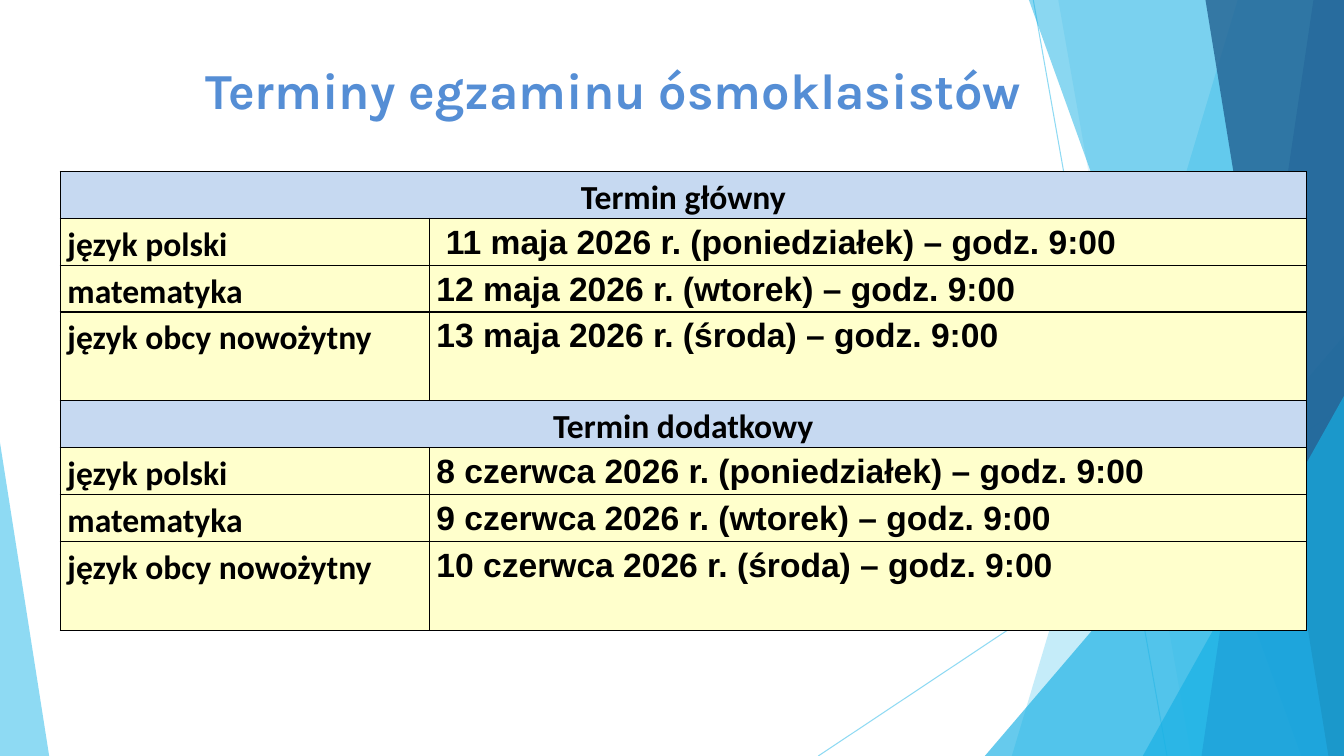
from lxml import etree
from pptx import Presentation
from pptx import util as u
from pptx.dml.color import RGBColor
from pptx.enum import shapes, text
from pptx.oxml import ns


def color(hex_string):
    return RGBColor.from_string(hex_string)


def set_opacity(properties, percent):
    for srgb in properties.iter(ns.qn("a:srgbClr")):
        etree.SubElement(srgb, ns.qn("a:alpha"), val=str(percent * 1000))


WIDTH, HEIGHT = 33.87, 19.05
presentation = Presentation()
presentation.slide_width = u.Cm(WIDTH)
presentation.slide_height = u.Cm(HEIGHT)
slide = presentation.slides.add_slide(presentation.slide_layouts[6])

# Thin background lines
for x1, y1, x2, y2 in [(26.04, 0, 29.41, HEIGHT), (WIDTH, 10.24, 20.62, HEIGHT)]:
    line = slide.shapes.add_connector(
        shapes.MSO_CONNECTOR.STRAIGHT, u.Cm(x1), u.Cm(y1), u.Cm(x2), u.Cm(y2))
    line.line.color.rgb = color("5FCBEF")
    line.line.width = u.Pt(0.75)
    set_opacity(line._element.spPr, 70)
    etree.SubElement(line._element.spPr, ns.qn("a:effectLst"))

# Translucent facets along the right and left edges
TOP_RIGHT, BOTTOM_RIGHT = (WIDTH, 0), (WIDTH, HEIGHT)
facets = [
    ("5FCBEF", 36, [(31.19, 0), TOP_RIGHT, BOTTOM_RIGHT, (25.5, HEIGHT)]),
    ("5FCBEF", 20, [(26.67, 0), TOP_RIGHT, BOTTOM_RIGHT, (30.02, HEIGHT)]),
    ("17B0E4", 66, [(24.82, HEIGHT), (WIDTH, 8.46), BOTTOM_RIGHT]),
    ("17B0E4", 50, [(25.93, 0), TOP_RIGHT, BOTTOM_RIGHT, (32.79, HEIGHT)]),
    ("2E83C3", 70, [(33.1, 0), TOP_RIGHT, BOTTOM_RIGHT, (30.28, HEIGHT)]),
    ("236292", 80, [(30.38, 0), TOP_RIGHT, BOTTOM_RIGHT, (33.48, HEIGHT)]),
    ("17B0E4", 66, [(28.8, HEIGHT), (WIDTH, 9.98), BOTTOM_RIGHT]),
    ("5FCBEF", 70, [(0, HEIGHT), (0, 11.15), (1.24, HEIGHT)]),
]
for fill, opacity, corners in facets:
    points = [(u.Cm(x), u.Cm(y)) for x, y in corners]
    builder = slide.shapes.build_freeform(*points[0])
    builder.add_line_segments(points[1:], close=True)
    facet = builder.convert_to_shape()
    facet.shadow.inherit = False
    facet.fill.solid()
    facet.fill.fore_color.rgb = color(fill)
    facet.line.fill.background()
    set_opacity(facet._element.spPr, opacity)

# Title
title = slide.shapes.add_textbox(u.Cm(4.93), u.Cm(1.36), u.Cm(23.88), u.Cm(3.66))
title.text_frame.word_wrap = True
title.text_frame.text = "Terminy egzaminu ósmoklasistów"
title_font = title.text_frame.paragraphs[0].runs[0].font
title_font.name = "Karla"
title_font.size = u.Pt(36)
title_font.bold = True
title_font.color.rgb = color("558ED5")

# Exam dates: a row with one entry is a heading across both columns
exams = [
    ("Termin główny",),
    ("język polski", " 11 maja 2026 r. (poniedziałek) – godz. 9:00"),
    ("matematyka", "12 maja 2026 r. (wtorek) – godz. 9:00"),
    ("język obcy nowożytny", "13 maja 2026 r. (środa) – godz. 9:00"),
    ("Termin dodatkowy",),
    ("język polski", "8 czerwca 2026 r. (poniedziałek) – godz. 9:00"),
    ("matematyka", "9 czerwca 2026 r. (wtorek) – godz. 9:00"),
    ("język obcy nowożytny", "10 czerwca 2026 r. (środa) – godz. 9:00"),
]
table = slide.shapes.add_table(
    len(exams), 2, u.Cm(1.52), u.Cm(4.32), u.Cm(31.4), u.Cm(11.5)).table
table.first_row = False
table.horz_banding = False
table.columns[0].width = u.Cm(9.3)
table.columns[1].width = u.Cm(22.1)

for row, entries in enumerate(exams):
    is_heading = len(entries) == 1
    is_last_of_group = entries[0] == "język obcy nowożytny"
    table.rows[row].height = u.Cm(2.24 if is_last_of_group else 1.18)
    if is_heading:
        table.cell(row, 0).merge(table.cell(row, 1))

    for column in range(2):
        cell = table.cell(row, column)
        cell.margin_left = cell.margin_right = u.Cm(0.18)
        cell.margin_top = cell.margin_bottom = 0
        cell.fill.solid()
        cell.fill.fore_color.rgb = color("C6D9F1" if is_heading else "FFFFCC")

        # Black borders, placed ahead of the fill
        cell_properties = cell._tc.get_or_add_tcPr()
        for index, side in enumerate(("lnL", "lnR", "lnT", "lnB")):
            border = etree.Element(ns.qn("a:" + side), w=str(u.Pt(1)))
            border_fill = etree.SubElement(border, ns.qn("a:solidFill"))
            etree.SubElement(border_fill, ns.qn("a:srgbClr"), val="000000")
            cell_properties.insert(index, border)

    for column, entry in enumerate(entries):
        cell = table.cell(row, column)
        cell.text_frame.text = entry
        paragraph = cell.text_frame.paragraphs[0]
        paragraph.line_spacing = 1.15
        if is_heading:
            paragraph.alignment = text.PP_ALIGN.CENTER
        font = paragraph.runs[0].font
        font.name = ("Calibri", "Arial")[column]
        font.size = u.Pt(24)
        font.bold = True
        font.color.rgb = color("000000")

presentation.save("out.pptx")
